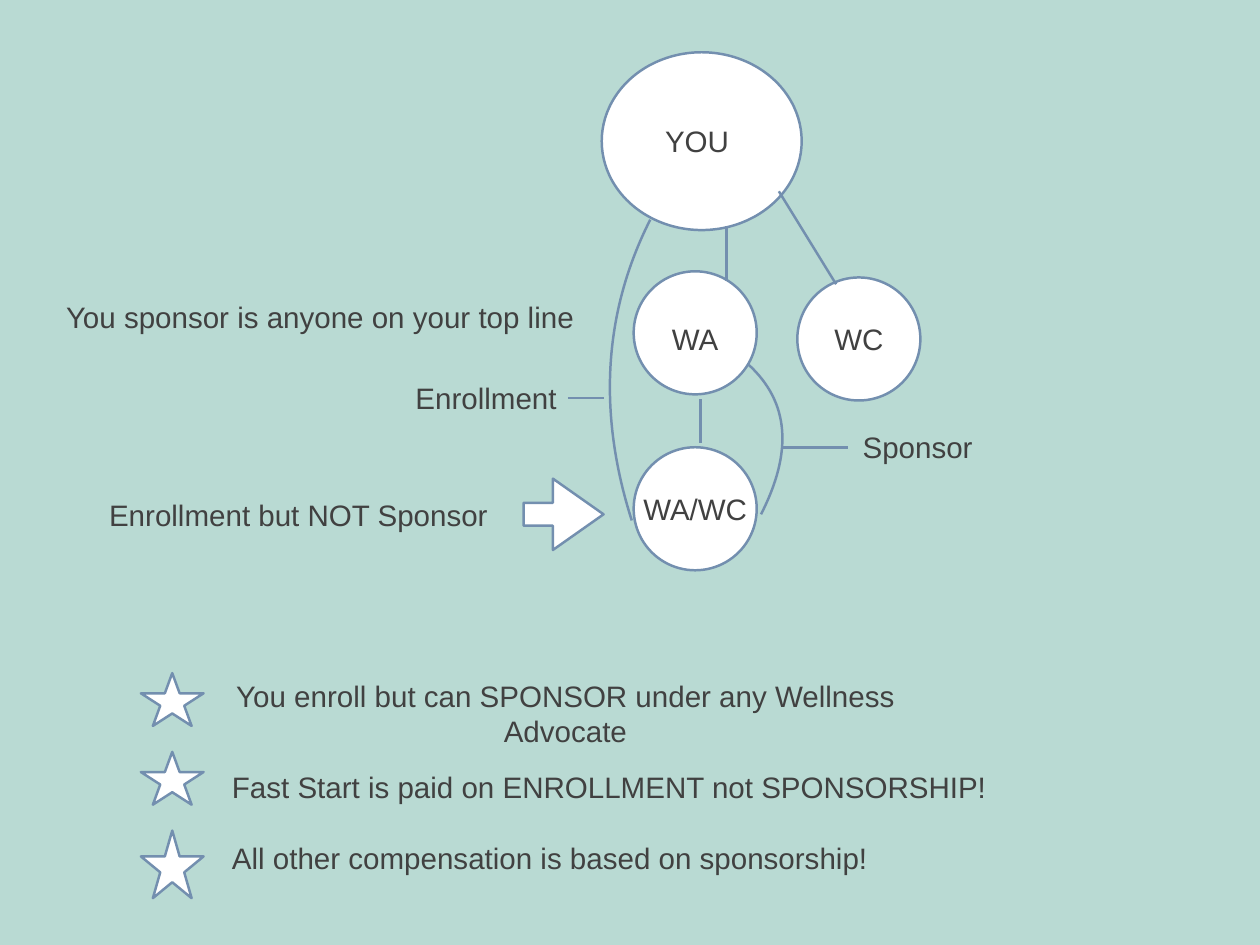
from dataclasses import dataclass
from lxml.etree import SubElement
from pptx import Presentation
from pptx.dml.color import RGBColor
from pptx.enum.shapes import MSO_CONNECTOR, MSO_SHAPE
from pptx.enum.text import MSO_ANCHOR, PP_ALIGN
from pptx.oxml.ns import qn
from pptx.util import Pt


@dataclass
class Theme:
    back: RGBColor = RGBColor(0xB9, 0xDA, 0xD3)
    fill: RGBColor = RGBColor(0xFF, 0xFF, 0xFF)
    edge: RGBColor = RGBColor(0x73, 0x8F, 0xAF)
    ink: RGBColor = RGBColor(0x41, 0x41, 0x41)
    font: str = "Arial"
    size: int = 24
    rule: int = 2


theme = Theme()
deck = Presentation()
deck.slide_width, deck.slide_height = Pt(1024), Pt(768)
slide = deck.slides.add_slide(deck.slide_layouts[6])
slide.background.fill.solid()
slide.background.fill.fore_color.rgb = theme.back
shapes = slide.shapes


def write(text, left, top, width, height=36, align=PP_ALIGN.CENTER, wrap=False, gap=0):
    box = shapes.add_textbox(Pt(left), Pt(top), Pt(width), Pt(height))
    frame = box.text_frame
    frame.word_wrap = wrap
    frame.vertical_anchor = MSO_ANCHOR.MIDDLE
    frame.margin_left = frame.margin_right = Pt(4)
    frame.margin_top = frame.margin_bottom = Pt(4)
    frame.text = text
    for rank, para in enumerate(frame.paragraphs):
        para.alignment = align
        para.space_before = Pt(gap if rank else 0)
        para.font.name = theme.font
        para.font.size = Pt(theme.size)
        para.font.color.rgb = theme.ink


def style(shape, filled=True):
    shape.shadow.inherit = False
    shape.line.color.rgb = theme.edge
    shape.line.width = Pt(theme.rule)
    if filled:
        shape.fill.solid()
        shape.fill.fore_color.rgb = theme.fill
    else:
        shape.fill.background()


for left, top, width, height in [
    (489, 42.5, 162.5, 144.5),
    (515, 220.5, 100, 100),
    (515, 363.5, 100, 100),
    (648, 225.5, 100, 100),
]:
    style(shapes.add_shape(MSO_SHAPE.OVAL, Pt(left), Pt(top), Pt(width), Pt(height)))

for text, left, top, width in [
    ("YOU", 533, 96.5, 67),
    ("WA", 538.5, 257, 53),
    ("WC", 674, 257, 48),
    ("WA/WC", 518, 395.5, 94),
    ("You sponsor is anyone on your top line", 47.5, 239, 425),
    ("Enrollment", 333.5, 305, 123),
    ("Sponsor", 696, 345, 99.5),
    ("Enrollment but NOT Sponsor", 83.5, 400.5, 318),
]:
    write(text, left, top, width)

for start_x, start_y, end_x, end_y in [
    (590.5, 228, 590.5, 183.5),
    (679.5, 231, 633, 155.5),
    (569.5, 360, 569.5, 324),
    (461.5, 323.5, 491, 323.5),
    (636, 363.5, 689, 363.5),
]:
    line = shapes.add_connector(
        MSO_CONNECTOR.STRAIGHT, Pt(start_x), Pt(start_y), Pt(end_x), Pt(end_y)
    )
    line.line.color.rgb = theme.edge
    line.line.width = Pt(theme.rule)
    SubElement(line._element.spPr, qn("a:effectLst"))

for left, top, right, base, points in [
    (608.5, 296.5, 636, 418, [(608.5, 296.5), (641.5, 327), (644.5, 367), (618.5, 418)]),
    (495.5, 178.5, 528.5, 423, [(513.5, 423), (485.5, 335.5), (490.5, 253.5), (528.5, 178.5)]),
]:
    form = shapes.build_freeform(Pt(left), Pt(top))
    form.add_line_segments([(Pt(right), Pt(base))], close=False)
    curve = form.convert_to_shape()
    style(curve, filled=False)
    path = next(curve._element.iter(qn("a:path")))
    for child in list(path):
        path.remove(child)
    move = SubElement(path, qn("a:moveTo"))
    bend = SubElement(path, qn("a:cubicBezTo"))
    for rank, (x, y) in enumerate(points):
        spot = SubElement(bend if rank else move, qn("a:pt"))
        spot.set("x", str(Pt(x - left)))
        spot.set("y", str(Pt(y - top)))

arrow = shapes.add_shape(MSO_SHAPE.RIGHT_ARROW, Pt(425.5), Pt(389), Pt(65), Pt(58))
arrow.adjustments[0] = 0.32
arrow.adjustments[1] = 0.71
style(arrow)

for rank, height in enumerate([43, 43, 55]):
    style(shapes.add_shape(
        MSO_SHAPE.STAR_5_POINT, Pt(114.5), Pt(547 + 64 * rank), Pt(51), Pt(height)
    ))

write("You enroll but can SPONSOR under any Wellness Advocate",
      188, 548, 543, height=63, wrap=True)
write("Fast Start is paid on ENROLLMENT not SPONSORSHIP!\n"
      "All other compensation is based on sponsorship!",
      184.5, 621.5, 623.5, height=94, align=PP_ALIGN.LEFT, gap=29)

deck.save("out.pptx")
